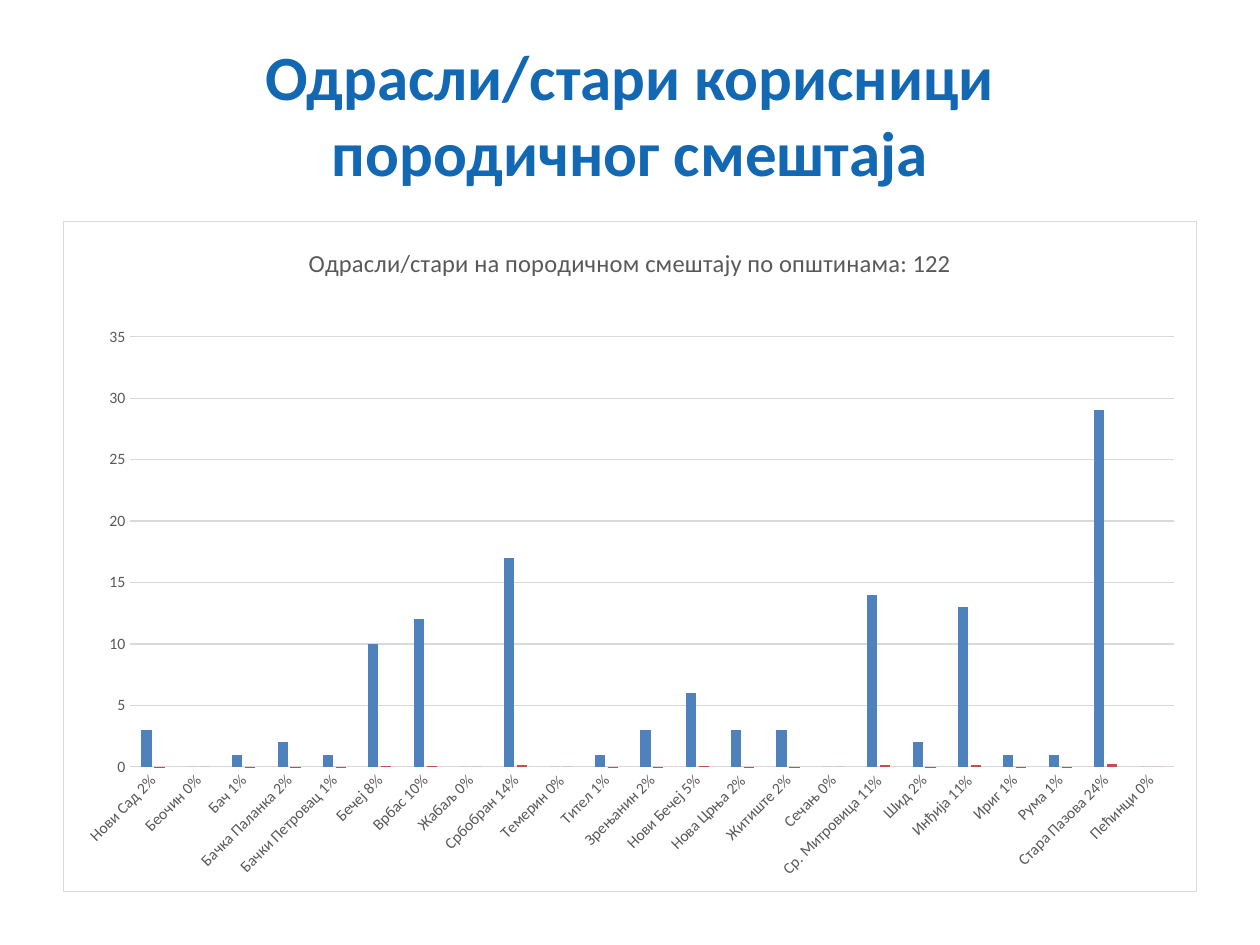
import pptx
import pptx.chart.data
import pptx.dml.color
import pptx.enum.chart
import pptx.enum.text
import pptx.oxml
import pptx.oxml.ns
import pptx.util
from pptx.util import Inches

FONT = "Calibri"
BLUE, RED = "4F81BD", "C0504D"
HEADING, GREY, RULE = "1268B2", "595959", "D9D9D9"

# Municipality, number of users, share of all users in percent
MUNICIPALITIES = [
    ("Нови Сад", 3, 2),
    ("Беочин", 0, 0),
    ("Бач", 1, 1),
    ("Бачка Паланка", 2, 2),
    ("Бачки Петровац", 1, 1),
    ("Бечеј", 10, 8),
    ("Врбас", 12, 10),
    ("Жабаљ", 0, 0),
    ("Србобран", 17, 14),
    ("Темерин", 0, 0),
    ("Тител", 1, 1),
    ("Зрењанин", 3, 2),
    ("Нови Бечеј", 6, 5),
    ("Нова Црња", 3, 2),
    ("Житиште", 3, 2),
    ("Сечањ", 0, 0),
    ("Ср. Митровица", 14, 11),
    ("Шид", 2, 2),
    ("Инђија", 13, 11),
    ("Ириг", 1, 1),
    ("Рума", 1, 1),
    ("Стара Пазова", 29, 24),
    ("Пећинци", 0, 0),
]


def rgb(color):
    return pptx.dml.color.RGBColor.from_string(color)


def style_font(font, size, color, bold=False):
    font.name = FONT
    font.size = pptx.util.Pt(size)
    font.bold = bold
    font.color.rgb = rgb(color)


def style_line(line, color):
    line.color.rgb = rgb(color)
    line.width = pptx.util.Pt(0.75)


def add_heading(slide, left, top, width, height):
    frame = slide.shapes.add_textbox(left, top, width, height).text_frame
    frame.word_wrap = True
    frame.vertical_anchor = pptx.enum.text.MSO_ANCHOR.MIDDLE
    heading = frame.paragraphs[0]
    heading.alignment = pptx.enum.text.PP_ALIGN.CENTER
    for index, words in enumerate(("Одрасли/стари корисници", "породичног смештаја")):
        if index:
            heading.add_line_break()
        run = heading.add_run()
        run.text = words
        style_font(run.font, 36, HEADING, bold=True)


def frame_chart(chart, width, height):
    """Give the chart area its thin border and fix the plot's position."""
    namespaces = pptx.oxml.ns.nsdecls("c", "a")
    border = pptx.oxml.parse_xml(
        f'<c:spPr {namespaces}><a:noFill/><a:ln w="9525"><a:solidFill>'
        f'<a:srgbClr val="{RULE}"/></a:solidFill></a:ln></c:spPr>')
    chart_space = chart.element
    chart_space.find(pptx.oxml.ns.qn("c:chart")).addnext(border)

    plot_area = chart_space.find(".//" + pptx.oxml.ns.qn("c:plotArea"))
    for old_layout in plot_area.findall(pptx.oxml.ns.qn("c:layout")):
        plot_area.remove(old_layout)
    fractions = {"x": Inches(0.53) / width, "y": Inches(0.92) / height,
                 "w": Inches(8.29) / width, "h": Inches(3.42) / height}
    bounds = "".join(f'<c:{name} val="{value}"/>' for name, value in fractions.items())
    plot_area.insert(0, pptx.oxml.parse_xml(
        f'<c:layout {namespaces}><c:manualLayout><c:layoutTarget val="inner"/>'
        f'<c:xMode val="edge"/><c:yMode val="edge"/>{bounds}'
        f'</c:manualLayout></c:layout>'))


def add_users_chart(slide, left, top, width, height):
    names, users, shares = zip(*MUNICIPALITIES)
    chart_data = pptx.chart.data.CategoryChartData()
    chart_data.categories = [f"{name} {share}%" for name, share in zip(names, shares)]
    chart_data.add_series("Series 1", users)
    chart_data.add_series("Series 2", [share / 100 for share in shares])
    chart = slide.shapes.add_chart(
        pptx.enum.chart.XL_CHART_TYPE.COLUMN_CLUSTERED,
        left, top, width, height, chart_data).chart
    style_font(chart.font, 10, "000000")
    chart.has_legend = False

    # Chart title
    chart.has_title = True
    title = chart.chart_title.text_frame.paragraphs[0].add_run()
    title.text = "Одрасли/стари на породичном смештају по општинама: 122"
    style_font(title.font, 14, GREY)
    chart.chart_title.include_in_layout = False

    # Columns
    plot = chart.plots[0]
    plot.gap_width, plot.overlap = 219, -27
    plot.vary_by_categories = False
    for series, color in zip(plot.series, (BLUE, RED)):
        series.format.fill.solid()
        series.format.fill.fore_color.rgb = rgb(color)
        series.invert_if_negative = False

    # Axes
    for axis in (chart.category_axis, chart.value_axis):
        axis.major_tick_mark = pptx.enum.chart.XL_TICK_MARK.NONE
        axis.minor_tick_mark = pptx.enum.chart.XL_TICK_MARK.NONE
        style_font(axis.tick_labels.font, 9, GREY)
    style_line(chart.category_axis.format.line, RULE)
    label_body = chart.category_axis._element.find(
        ".//" + pptx.oxml.ns.qn("c:txPr") + "/" + pptx.oxml.ns.qn("a:bodyPr"))
    label_body.set("rot", "-2700000")
    counts = chart.value_axis
    counts.minimum_scale, counts.maximum_scale, counts.major_unit = 0, 35, 5
    counts.tick_labels.number_format = "General"
    counts.tick_labels.number_format_is_linked = False
    counts.format.line.fill.background()
    counts.has_major_gridlines = True
    style_line(counts.major_gridlines.format.line, RULE)

    frame_chart(chart, width, height)


def main():
    deck = pptx.Presentation()
    deck.slide_width, deck.slide_height = Inches(10), Inches(7.5)
    slide = deck.slides.add_slide(deck.slide_layouts[6])
    add_heading(slide, Inches(0.5), Inches(0.3), Inches(9), Inches(1.2))
    add_users_chart(slide, Inches(0.5), Inches(1.75), Inches(9), Inches(5.33))
    deck.save("out.pptx")


if __name__ == "__main__":
    main()
